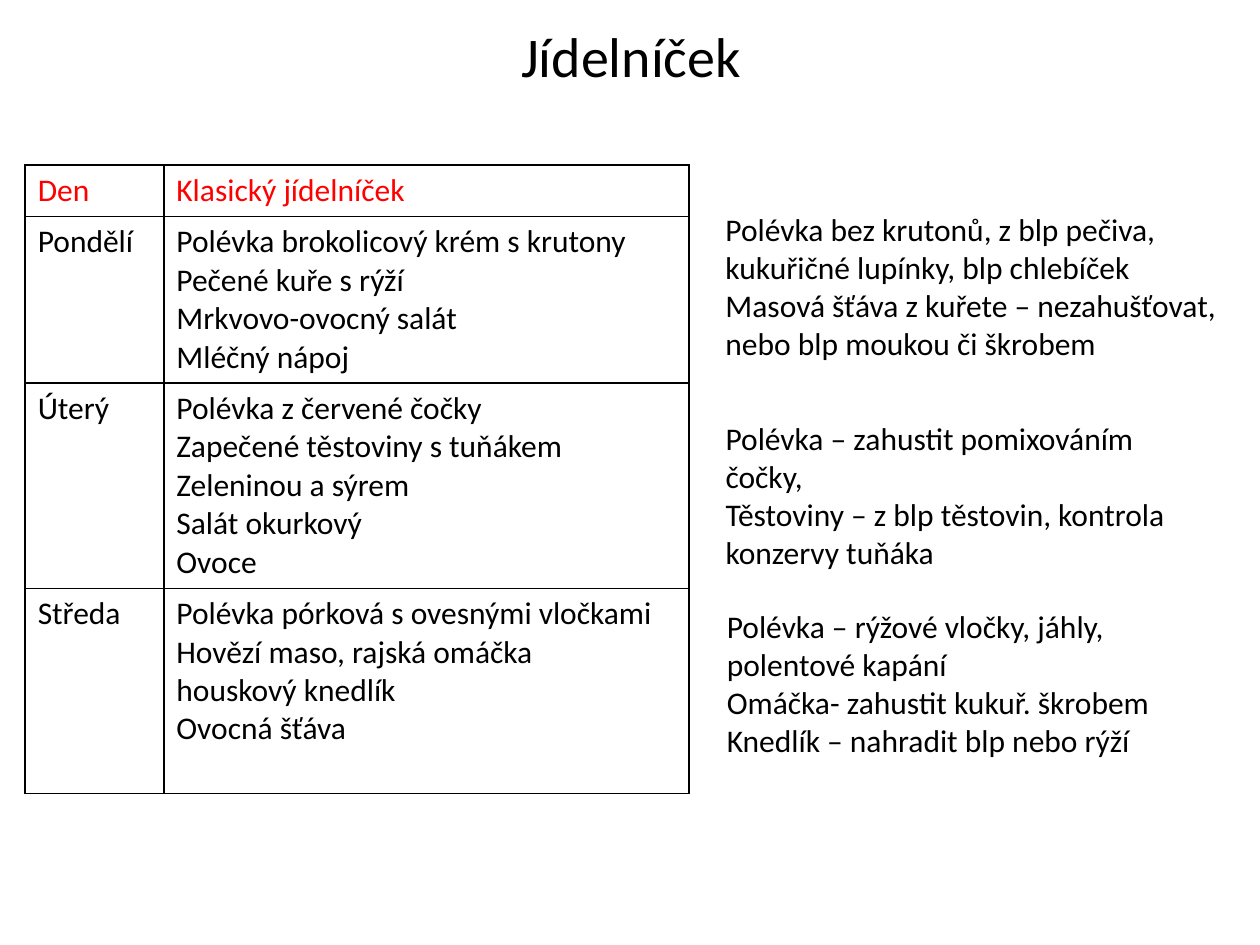
from dataclasses import dataclass

import lxml.etree
import pptx
import pptx.dml.color
import pptx.enum.text
import pptx.oxml.ns
import pptx.util


@dataclass(frozen=True)
class Theme:
    font: str = "Calibri"
    ink: str = "000000"
    accent: str = "FF0000"
    title_size: int = 32
    body_size: int = 18
    border_width: int = 1


THEME = Theme()
PAGE_WIDTH, PAGE_HEIGHT = 10, 7.5

COLUMN_WIDTHS = [1.1, 4.17]
ROW_HEIGHTS = [0.41, 1.32, 1.63, 1.63]
MENU = [
    ("Den", ["Klasický jídelníček"]),
    ("Pondělí", ["Polévka brokolicový krém s krutony", "Pečené kuře s rýží",
                 "Mrkvovo-ovocný salát", "Mléčný nápoj"]),
    ("Úterý", ["Polévka z červené čočky", "Zapečené těstoviny s tuňákem",
               "Zeleninou a sýrem", "Salát okurkový", "Ovoce"]),
    ("Středa", ["Polévka pórková s ovesnými vločkami", "Hovězí maso, rajská omáčka",
                "houskový knedlík", "Ovocná šťáva"]),
]
# Each note: left, top, width, height and its paragraphs.
NOTES = [
    ((5.66, 1.62, 4.34, 1.31),
     ["Polévka bez krutonů, z blp pečiva, kukuřičné lupínky, blp chlebíček",
      "Masová šťáva z kuřete – nezahušťovat, nebo blp moukou či škrobem"]),
    ((5.66, 3.28, 3.91, 1.31),
     ["Polévka – zahustit pomixováním čočky,",
      "Těstoviny – z blp těstovin, kontrola konzervy tuňáka"]),
    ((5.67, 4.77, 3.91, 1.31),
     ["Polévka – rýžové vločky, jáhly, polentové kapání",
      "Omáčka- zahustit kukuř. škrobem",
      "Knedlík – nahradit blp nebo rýží"]),
]


def write_text(frame, lines, size=THEME.body_size, color=THEME.ink,
               align=pptx.enum.text.PP_ALIGN.LEFT):
    for index, line in enumerate(lines):
        para = frame.paragraphs[0] if index == 0 else frame.add_paragraph()
        para.alignment = align
        span = para.add_run()
        span.text = line
        span.font.name = THEME.font
        span.font.size = pptx.util.Pt(size)
        span.font.color.rgb = pptx.dml.color.RGBColor.from_string(color)


def add_text_box(page, box, lines, anchor=pptx.enum.text.MSO_ANCHOR.TOP, **text_format):
    frame = page.shapes.add_textbox(*map(pptx.util.Inches, box)).text_frame
    frame.word_wrap = True
    frame.vertical_anchor = anchor
    write_text(frame, lines, **text_format)


def draw_borders(cell):
    properties = cell._tc.get_or_add_tcPr()
    qualified = pptx.oxml.ns.qn
    width = str(pptx.util.Pt(THEME.border_width))
    for position, side in enumerate(("a:lnL", "a:lnR", "a:lnT", "a:lnB")):
        line = lxml.etree.Element(qualified(side), w=width)
        fill = lxml.etree.SubElement(line, qualified("a:solidFill"))
        lxml.etree.SubElement(fill, qualified("a:srgbClr"), val=THEME.ink)
        properties.insert(position, line)


def add_title(page, box):
    add_text_box(page, box, ["Jídelníček"], size=THEME.title_size,
                 align=pptx.enum.text.PP_ALIGN.CENTER,
                 anchor=pptx.enum.text.MSO_ANCHOR.MIDDLE)


def add_menu_table(page, left, top):
    box = (left, top, sum(COLUMN_WIDTHS), sum(ROW_HEIGHTS))
    table = page.shapes.add_table(len(MENU), len(COLUMN_WIDTHS),
                                  *map(pptx.util.Inches, box)).table
    table.first_row = table.horz_banding = False
    for column, width in zip(table.columns, COLUMN_WIDTHS):
        column.width = pptx.util.Inches(width)
    for row_index, (day, dishes) in enumerate(MENU):
        row = table.rows[row_index]
        row.height = pptx.util.Inches(ROW_HEIGHTS[row_index])
        color = THEME.accent if row_index == 0 else THEME.ink
        for cell, lines in zip(row.cells, ([day], dishes)):
            cell.fill.background()
            draw_borders(cell)
            write_text(cell.text_frame, lines, color=color)


def add_notes(page):
    for box, lines in NOTES:
        add_text_box(page, box, lines)


def main():
    deck = pptx.Presentation()
    deck.slide_width = pptx.util.Inches(PAGE_WIDTH)
    deck.slide_height = pptx.util.Inches(PAGE_HEIGHT)
    page = deck.slides.add_slide(deck.slide_layouts[6])
    add_title(page, (0.51, -0.19, 9, 1.25))
    add_menu_table(page, 0.2, 1.31)
    add_notes(page)
    deck.save("out.pptx")


if __name__ == "__main__":
    main()
